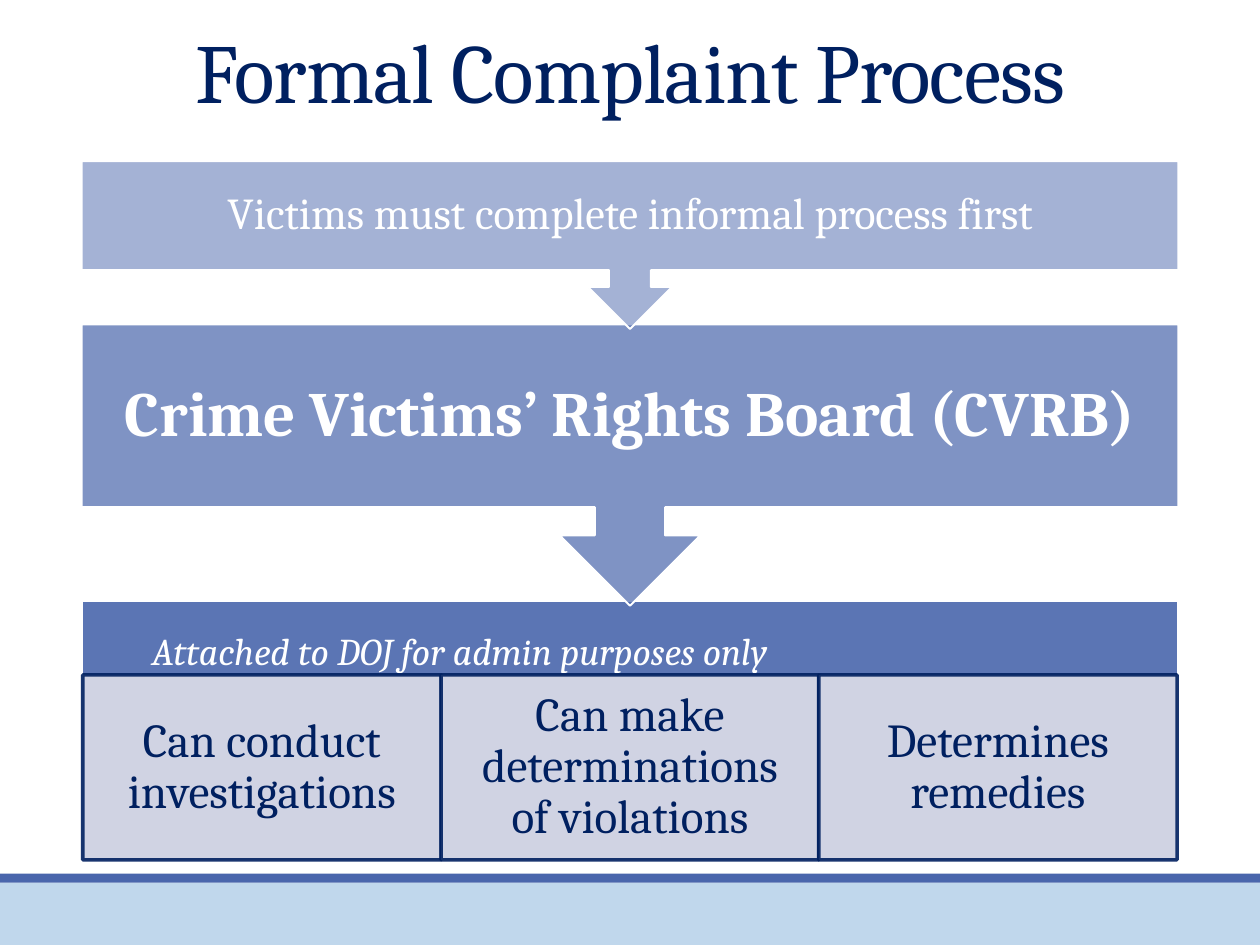
from pptx import Presentation
from pptx.dml.color import RGBColor
from pptx.enum.shapes import MSO_SHAPE
from pptx.enum.text import MSO_ANCHOR, PP_ALIGN
from pptx.oxml.ns import qn
from pptx.util import Inches, Pt
from lxml import etree

# Content
TITLE = "Formal Complaint Process"
BOARD_NOTE = "Attached to DOJ for admin purposes only"
POWERS = [  # text, column width
    ("Can conduct investigations", 3.16),
    ("Can make determinations of violations", 3.33),
    ("Determines remedies", 3.16),
]
STEPS = [  # text, top, height, opacity %, size, bold, inset
    ("Crime Victims’ Rights Board (CVRB)", 2.86, 2.48, 70, 40, True, 0.31),
    ("Victims must complete informal process first", 1.42, 1.48, 50, 28, False, 0.22),
]

# Style and grid, in inches
FONT = "Cambria"
NAVY = RGBColor(0x00, 0x20, 0x60)
BLUE = RGBColor(0x4A, 0x66, 0xAC)
PALE_BLUE = RGBColor(0xC0, 0xD7, 0xEC)
GREY_BLUE = RGBColor(0xD0, 0xD3, 0xE3)
WHITE = RGBColor(0xFF, 0xFF, 0xFF)
SLIDE_W, SLIDE_H = 11.11, 8.33
FLOW_W = 9.67
FLOW_X = (SLIDE_W - FLOW_W) / 2
NOTE_Y, NOTE_H, NOTE_BOX_H = 5.3, 0.92, 1.71
POWERS_Y, POWERS_H = 5.95, 1.63
FOOTER_Y, RULE_H = 7.78, 0.08

prs = Presentation()
prs.slide_width, prs.slide_height = Inches(SLIDE_W), Inches(SLIDE_H)
s = prs.slides.add_slide(prs.slide_layouts[6])


def set_opacity(fill_format, parent, percent):
    color = parent.find(qn("a:solidFill")).find(qn("a:srgbClr"))
    etree.SubElement(color, qn("a:alpha")).set("val", str(percent * 1000))


def add_box(kind, x, y, w, h, fill, opacity=100, line=None, line_w=1.25, line_opacity=100):
    sp = s.shapes.add_shape(kind, Inches(x), Inches(y), Inches(w), Inches(h))
    sp.shadow.inherit = False
    sp.fill.solid()
    sp.fill.fore_color.rgb = fill
    if opacity < 100:
        set_opacity(sp.fill, sp.fill._xPr, opacity)
    if line is None:
        sp.line.fill.background()
    else:
        sp.line.color.rgb = line
        sp.line.width = Pt(line_w)
        if line_opacity < 100:
            set_opacity(sp.line.fill, sp.line.fill._xPr, line_opacity)
    return sp


def write(sp, text, size, color, insets, spacing=0.9, align=PP_ALIGN.CENTER,
          anchor=MSO_ANCHOR.MIDDLE, bold=False, italic=False):
    tf = sp.text_frame
    tf.word_wrap = True
    tf.vertical_anchor = anchor
    tf.margin_left, tf.margin_top, tf.margin_right, tf.margin_bottom = map(Inches, insets)
    p = tf.paragraphs[0]
    p.alignment, p.line_spacing = align, spacing
    r = p.add_run()
    r.text = text
    r.font.name, r.font.size, r.font.color.rgb = FONT, Pt(size), color
    r.font.bold, r.font.italic = bold, italic
    return r


# Footer band and rule
add_box(MSO_SHAPE.RECTANGLE, 0, FOOTER_Y, SLIDE_W, SLIDE_H - FOOTER_Y, PALE_BLUE)
add_box(MSO_SHAPE.RECTANGLE, 0, FOOTER_Y - RULE_H, SLIDE_W, RULE_H, BLUE)

# Title
title = s.shapes.add_textbox(Inches(0.56), Inches(0.26), Inches(10), Inches(0.99))
r = write(title, TITLE, 53.3, NAVY, (0.1, 0.05, 0.1, 0.05), 0.85, anchor=MSO_ANCHOR.TOP)
r.font._element.set("spc", "-60")

# Board note, centred in the top part of its box
note = add_box(MSO_SHAPE.RECTANGLE, FLOW_X, NOTE_Y, FLOW_W, NOTE_BOX_H, BLUE, 90, WHITE)
write(note, BOARD_NOTE, 24, WHITE, (0.62, 0.19, 0.19, NOTE_BOX_H - NOTE_H + 0.19),
      align=PP_ALIGN.LEFT, italic=True)

# Powers of the board
x = (SLIDE_W - sum(w for _, w in POWERS)) / 2
for text, w in POWERS:
    sp = add_box(MSO_SHAPE.RECTANGLE, x, POWERS_Y, w, POWERS_H, GREY_BLUE,
                 line=NAVY, line_w=2.25, line_opacity=90)
    write(sp, text, 30, NAVY, (0.23, 0.04, 0.23, 0.04))
    x += w

# Steps with down arrows
for text, y, h, opacity, size, bold, inset in STEPS:
    sp = add_box(MSO_SHAPE.DOWN_ARROW_CALLOUT, FLOW_X, y, FLOW_W, h, BLUE, opacity, WHITE)
    write(sp, text, size, WHITE, (inset,) * 4, bold=bold)

prs.save("out.pptx")
